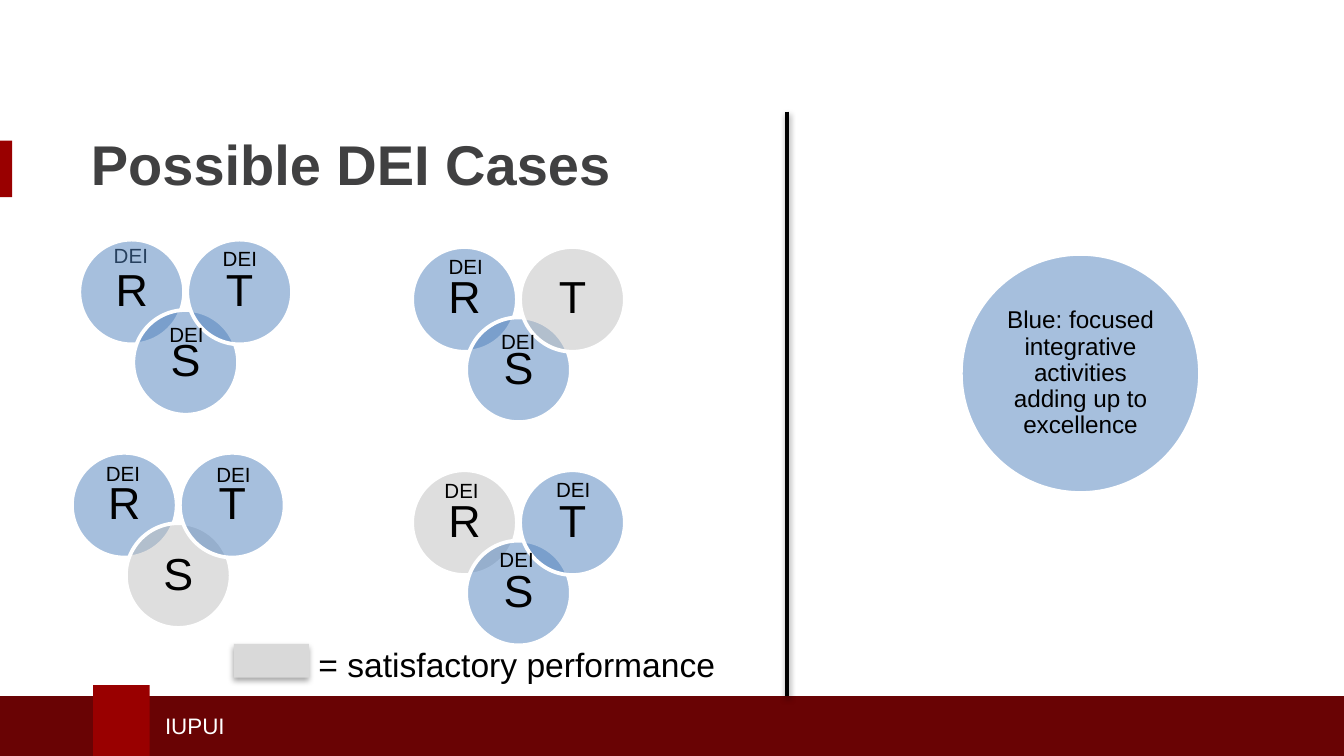
import pptx
import pptx.util
import pptx.dml.color
import pptx.enum.shapes
import pptx.enum.text
import pptx.oxml
import pptx.oxml.ns

Cm = pptx.util.Cm
Pt = pptx.util.Pt
color = pptx.dml.color.RGBColor.from_string
SHAPE = pptx.enum.shapes.MSO_SHAPE
ALIGN = pptx.enum.text.PP_ALIGN
ANCHOR = pptx.enum.text.MSO_ANCHOR

BLUE, GREY, BLACK, WHITE = "4F81BD", "BFBFBF", "000000", "FFFFFF"

deck = pptx.Presentation()
deck.slide_width = Cm(25.4)
deck.slide_height = Cm(14.29)
page = deck.slides.add_slide(deck.slide_layouts[6])


def add_filled(kind, left, top, width, height, fill):
    """Add a shape; circles are half transparent with a white rim."""
    shape = page.shapes.add_shape(kind, Cm(left), Cm(top), Cm(width), Cm(height))
    shape.shadow.inherit = False
    shape.fill.solid()
    shape.fill.fore_color.rgb = color(fill)
    if kind == SHAPE.OVAL:
        shape.line.color.rgb = color(WHITE)
        shape.line.width = Pt(2)
        fill_color = shape.fill._xPr.find(".//" + pptx.oxml.ns.qn("a:srgbClr"))
        fill_color.append(pptx.oxml.parse_xml(
            f'<a:alpha {pptx.oxml.ns.nsdecls("a")} val="50000"/>'))
    else:
        shape.line.fill.background()
    return shape


def add_text(text, size, ink=BLACK, at=None, circle=None, inset=0.25,
             wrap=False, anchor=ANCHOR.TOP, bold=False):
    """Write centred in a circle, or left aligned in a new box."""
    box = circle or page.shapes.add_textbox(*[Cm(length) for length in at])
    frame = box.text_frame
    frame.word_wrap = wrap
    frame.vertical_anchor = anchor
    para = frame.paragraphs[0]
    para.text = text
    para.font.name = "Arial"
    para.font.size = Pt(size)
    para.font.bold = bold
    para.font.color.rgb = color(ink)
    para.alignment = ALIGN.LEFT
    if circle:
        para.alignment = ALIGN.CENTER
        para.line_spacing = 0.9
        frame.margin_left = frame.margin_right = Cm(inset)
        frame.margin_top = frame.margin_bottom = Cm(inset)


# Title accent and footer
add_filled(SHAPE.RECTANGLE, 0, 2.66, 0.23, 1.07, "990000")
add_filled(SHAPE.RECTANGLE, 0, 13.16, 25.4, 1.13, "690304")
add_filled(SHAPE.RECTANGLE, 1.76, 12.95, 1.07, 1.34, "990000")
add_text("IUPUI", 12, WHITE, at=(2.87, 13.34, 10.03, 0.76), wrap=True, anchor=ANCHOR.MIDDLE)

# Title
add_text("Possible DEI Cases", 30, "404041", at=(1.47, 2.11, 22.23, 1.93),
         wrap=True, anchor=ANCHOR.MIDDLE, bold=True)

# Meaning of blue
legend_circle = add_filled(SHAPE.OVAL, 18.16, 4.8, 4.52, 4.52, BLUE)
add_text("Blue: focused integrative activities adding up to excellence", 13,
         circle=legend_circle, inset=0.13, wrap=True, anchor=ANCHOR.MIDDLE)

# Divider
divider = page.shapes.add_connector(
    pptx.enum.shapes.MSO_CONNECTOR.STRAIGHT, Cm(14.88), Cm(2.11), Cm(14.88), Cm(13.16))
divider.line.color.rgb = color(BLACK)
divider.line.width = Pt(2)
divider._element.spPr.append(
    pptx.oxml.parse_xml(f'<a:effectLst {pptx.oxml.ns.nsdecls("a")}/>'))

# This DEI label lies beneath the circles of its case
label_size = (1.17, 0.74)
add_text("DEI", 11, at=(1.9, 4.47, *label_size))

# Cases: corner, letter of the grey circle, DEI label positions
cases = [
    (1.5, 4.53, None, [(3.96, 4.52), (2.95, 5.97)]),
    (7.79, 4.67, "T", [(8.23, 4.67), (9.22, 6.1)]),
    (1.36, 8.56, "S", [(1.75, 8.59), (3.84, 8.61)]),
    (7.79, 8.89, "R", [(8.15, 8.92), (10.26, 8.89), (9.19, 10.21)]),
]
circle_offsets = [("R", 0, 0), ("S", 1.02, 1.33), ("T", 2.04, 0)]
for left, top, grey_letter, labels in cases:
    for letter, across, down in circle_offsets:
        fill = GREY if letter == grey_letter else BLUE
        circle = add_filled(SHAPE.OVAL, left + across, top + down, 1.98, 1.98, fill)
        add_text(letter, 24, circle=circle, wrap=True, anchor=ANCHOR.MIDDLE)
    for label_left, label_top in labels:
        add_text("DEI", 11, at=(label_left, label_top, *label_size))

# Meaning of grey
swatch = add_filled(SHAPE.RECTANGLE, 4.42, 12.17, 1.42, 0.64, "D9D9D9")
add_text("= satisfactory performance", 18, at=(5.77, 12.04, 8.08, 1.02))

# Soft shadows below the divider and the swatch
for shape, distance, opacity in [(divider, 20000, 38000), (swatch, 23000, 35000)]:
    effects = shape._element.spPr.find(pptx.oxml.ns.qn("a:effectLst"))
    effects.append(pptx.oxml.parse_xml(
        f'<a:outerShdw {pptx.oxml.ns.nsdecls("a")} blurRad="40000" dist="{distance}" '
        f'dir="5400000" rotWithShape="0"><a:srgbClr val="{BLACK}">'
        f'<a:alpha val="{opacity}"/></a:srgbClr></a:outerShdw>'))

deck.save("out.pptx")
